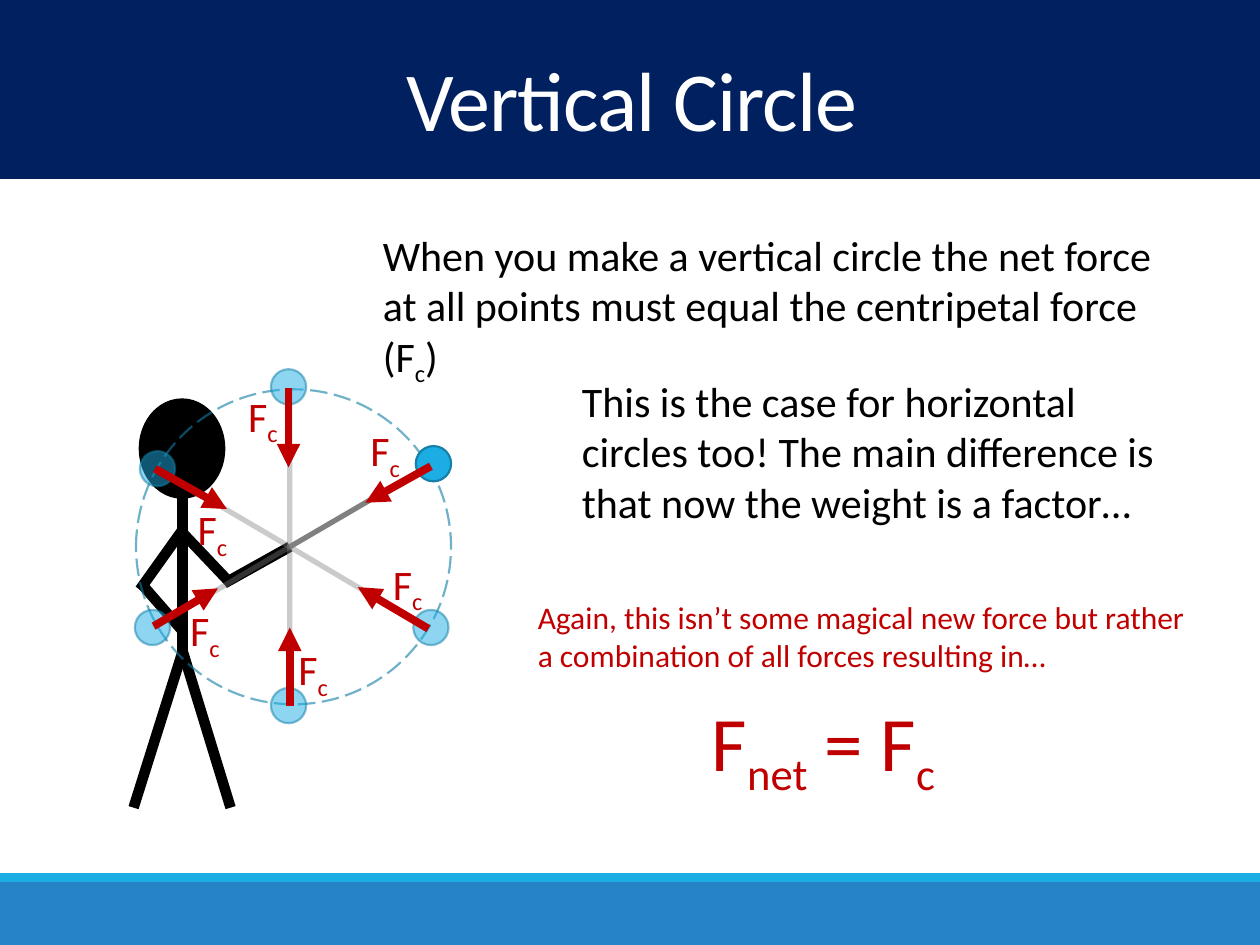
from lxml.etree import SubElement
from pptx import Presentation
from pptx.dml.color import RGBColor
from pptx.enum.dml import MSO_LINE as Dash
from pptx.enum.shapes import MSO_CONNECTOR as Link, MSO_SHAPE as Kind
from pptx.enum.text import MSO_ANCHOR as Anchor, MSO_AUTO_SIZE as Auto, PP_ALIGN as Align
from pptx.oxml.ns import qn
from pptx.util import Pt

PX = 9144
FONT = "Calibri"
COLORS = {
    "navy": "002060", "blue": "2683C6", "sky": "1CADE4", "rim": "117EA7",
    "edge": "1580A9", "white": "FFFFFF", "black": "000000",
    "grey": "7F7F7F", "rope": "808080", "red": "C00000",
}
HUB = (230, 434)
BALL = 28
LIMBS = [
    ((145, 385), (145, 522)),
    ((145, 517), (106, 641)),
    ((145, 517), (183, 641)),
    ((111, 468), (146, 419)),
    ((183, 463), (146, 424)),
    ((112, 463), (146, 502)),
    (HUB, (178, 463)),
]
GHOSTS = [(328, 484), (215, 546), (107, 484), (111, 358), (215, 293)]
SPOKES = [(338, 498), (230, 559), (122, 498), (230, 310), (126, 373)]
FORCES = [
    ((229, 308), (229, 371)),
    ((342, 370), (290, 399)),
    ((340, 499), (284, 466)),
    ((122, 497), (173, 467)),
    ((123, 372), (180, 404)),
    ((230, 560), (230, 498)),
]
LABELS = [(187, 305), (284, 332), (302, 438), (227, 506), (141, 475), (147, 395)]


def px(*nums):
    return [n * PX for n in nums]


def rgb(name):
    return RGBColor.from_string(COLORS[name])


def fade(item, pct):
    for tint in item.element.spPr.iter(qn("a:srgbClr")):
        SubElement(tint, qn("a:alpha"), val=str(pct * 1000))


def add_form(slide, kind, box, fill=None, edge=None):
    form = slide.shapes.add_shape(kind, *px(*box))
    form.shadow.inherit = False
    if fill:
        form.fill.solid()
        form.fill.fore_color.rgb = rgb(fill)
    else:
        form.fill.background()
    if edge:
        form.line.color.rgb = rgb(edge)
        form.line.width = Pt(1.25)
    else:
        form.line.fill.background()
    return form


def add_line(slide, start, end, color, width, arrow=False):
    line = slide.shapes.add_connector(Link.STRAIGHT, *px(*start, *end))
    line.line.color.rgb = rgb(color)
    line.line.width = Pt(width)
    props = line.element.spPr
    if arrow:
        SubElement(props.find(qn("a:ln")), qn("a:tailEnd"), type="triangle")
    SubElement(props, qn("a:effectLst"))
    return line


def set_font(para, size, color):
    para.font.name = FONT
    para.font.size = Pt(size)
    para.font.color.rgb = rgb(color)


def add_text(slide, box, parts, size, color, wrap=True):
    frame = slide.shapes.add_textbox(*px(*box)).text_frame
    frame.word_wrap = wrap
    frame.auto_size = Auto.SHAPE_TO_FIT_TEXT
    para = frame.paragraphs[0]
    set_font(para, size, color)
    for i, part in enumerate(parts):
        run = para.add_run()
        run.text = part
        if i % 2:
            run.font._element.set("baseline", "-25000")


def add_title(slide, text):
    band = add_form(slide, Kind.RECTANGLE, (0, 0, 1000, 142), "navy")
    title = slide.shapes.title
    band.element.addnext(title.element)
    title.left, title.top, title.width, title.height = px(3, 42, 997, 84)
    frame = title.text_frame
    frame.text = text
    frame.vertical_anchor = Anchor.MIDDLE
    frame.auto_size = Auto.NONE
    para = frame.paragraphs[0]
    para.alignment = Align.CENTER
    para.line_spacing = 0.85
    set_font(para, 48, "white")
    para.runs[0].font._element.set("spc", "-50")


def add_man(slide):
    add_form(slide, Kind.OVAL, (111, 317, 67, 78), "black", "black")
    for start, end in LIMBS:
        add_line(slide, start, end, "black", 6)


def add_orbit(slide):
    ring = add_form(slide, Kind.OVAL, (108, 309, 250, 250), edge="rim")
    ring.line.dash_style = Dash.LONG_DASH
    fade(ring, 60)
    for spot in GHOSTS:
        fade(add_form(slide, Kind.OVAL, (*spot, BALL, BALL), "sky", "rim"), 50)
    add_form(slide, Kind.OVAL, (330, 354, BALL, BALL), "sky", "edge")
    for tip in SPOKES:
        fade(add_line(slide, HUB, tip, "grey", 3), 40)
    add_line(slide, (338, 371), HUB, "rope", 3)


def add_forces(slide):
    for start, end in FORCES:
        add_line(slide, start, end, "red", 4.5, True)
    for spot in LABELS:
        add_text(slide, (*spot, 45, 50), ["F", "c"], 24, "red", False)


def main():
    deck = Presentation()
    deck.slide_width, deck.slide_height = px(1000, 750)
    slide = deck.slides.add_slide(deck.slide_layouts[5])
    add_form(slide, Kind.RECTANGLE, (0, 700, 1000, 50), "blue")
    add_form(slide, Kind.RECTANGLE, (0, 693, 1000, 7), "sky")
    add_title(slide, "Vertical Circle")
    add_man(slide)
    add_orbit(slide)
    add_forces(slide)
    add_text(slide, (294, 177, 663, 91), [
        "When you make a vertical circle the net force at all points "
        "must equal the centripetal force (F", "c", ")"], 24, "black")
    add_text(slide, (452, 293, 490, 131), [
        "This is the case for horizontal circles too! The main difference "
        "is that now the weight is a factor…"], 24, "black")
    add_text(slide, (555, 546, 234, 84), ["F", "net", " = F", "c"], 44, "red", False)
    add_text(slide, (417, 470, 540, 71), [
        "Again, this isn’t some magical new force but rather "
        "a combination of all forces resulting in…"], 18, "red")
    deck.save("out.pptx")


if __name__ == "__main__":
    main()
